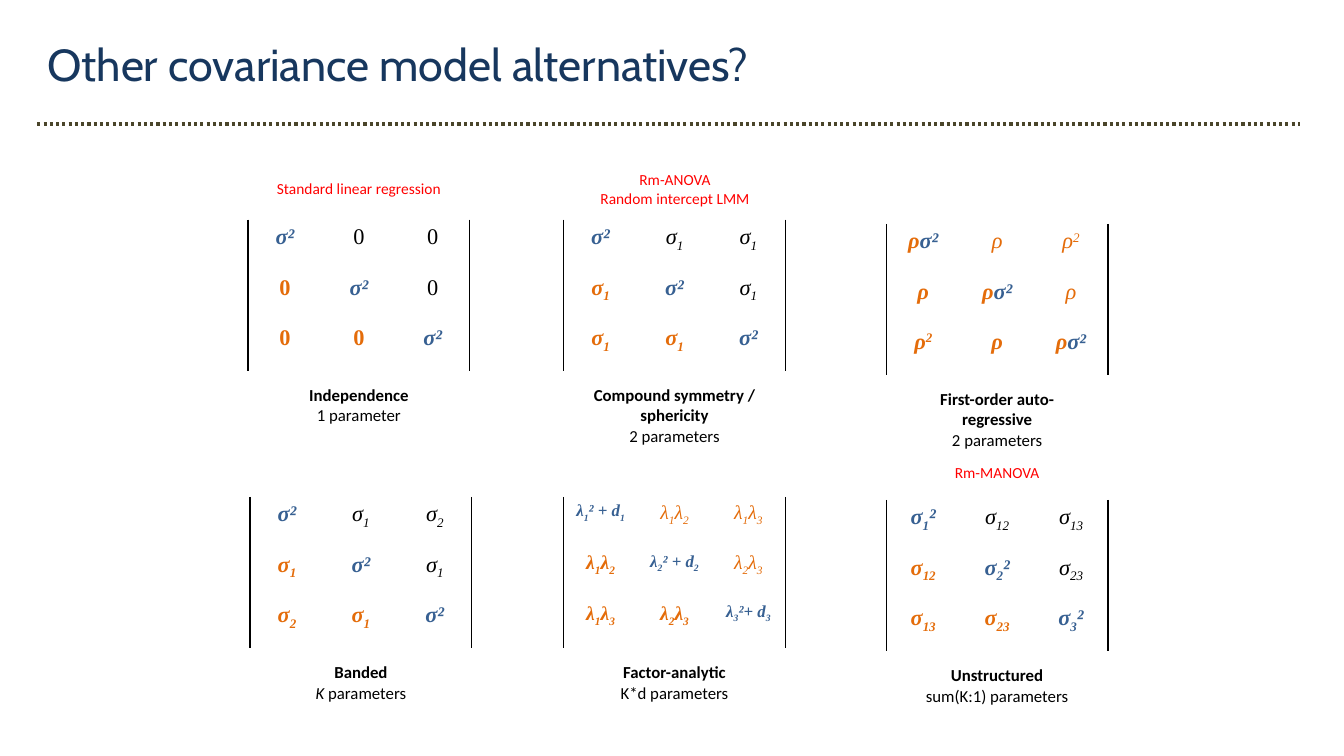
from pptx import Presentation
from pptx.dml.color import RGBColor
from pptx.enum.dml import MSO_LINE
from pptx.enum.shapes import MSO_CONNECTOR
from pptx.enum.text import PP_ALIGN as Align, MSO_AUTO_SIZE as Fit
from pptx.oxml import parse_xml
from pptx.oxml.ns import nsdecls
from pptx.util import Inches, Pt

BLUE, ORANGE, BLACK, RED = "376092", "E46C0A", "000000", "FF0000"
SIDE = 2.2
SHIFT = {"_": "-25000", "^": "30000"}
NO_GRID = "{2D5ABB26-0587-4C30-8999-92F81FD0307C}"

MODELS = [
    (2.46, 2.18, ["σ² 0 0", "0 σ² 0", "0 0 σ²"], BLACK, 16, 16,
     "Independence", ["1 parameter"], 1.2, False),
    (5.59, 2.18, ["σ² σ|_1 σ|_1", "σ|_1 σ² σ|_1", "σ|_1 σ|_1 σ²"], BLACK, 16, 16,
     "Compound symmetry / sphericity", ["2 parameters"], 2.41, True),
    (8.79, 2.22, ["ρ|σ² ρ ρ|^2", "ρ ρ|σ² ρ", "ρ|^2 ρ ρ|σ²"], ORANGE, 16, 16,
     "First-order auto-regressive", ["2 parameters"], 1.95, True),
    (2.48, 4.93, ["σ² σ|_1 σ|_2", "σ|_1 σ² σ|_1", "σ|_2 σ|_1 σ²"], BLACK, 16, 16,
     "Banded", ["K", " parameters"], 1.11, False),
    (5.59, 4.93, ["λ|_1|²~+~d|_1 λ|_1|λ|_2 λ|_1|λ|_3",
                  "λ|_1|λ|_2 λ|_2|²~+~d|_2 λ|_2|λ|_3",
                  "λ|_1|λ|_3 λ|_2|λ|_3 λ|_3|²+~d|_3"], ORANGE, 12, 14,
     "Factor-analytic", ["K*d parameters"], 1.3, False),
    (8.79, 4.96, ["σ|_1|² σ|_12 σ|_13", "σ|_12 σ|_2|² σ|_23", "σ|_13 σ|_23 σ|_3|²"],
     BLACK, 16, 16, "Unstructured", ["sum(K:1) parameters"], 1.63, False),
]

NOTES = [
    (2.64, 1.73, 1.84, 0.29, ["Standard linear regression"]),
    (5.85, 1.64, 1.69, 0.47, ["Rm-ANOVA", "Random intercept LMM"]),
    (9.36, 4.55, 1.06, 0.29, ["Rm-MANOVA"]),
]


def rgb(code):
    return RGBColor.from_string(code)


def add_run(para, text, size, face, color, bold=False, slant=False):
    run = para.add_run()
    run.text = text
    font = run.font
    font.size, font.name = Pt(size), face
    font.bold, font.italic = bold, slant
    font.color.rgb = rgb(color)
    return run


def add_box(slide, left, top, width, height, wrap=False):
    box = slide.shapes.add_textbox(Inches(left), Inches(top), Inches(width), Inches(height))
    frame = box.text_frame
    frame.word_wrap = wrap
    frame.auto_size = Fit.SHAPE_TO_FIT_TEXT
    return frame


def add_title(slide, text):
    frame = add_box(slide, 0.37, 0.32, 11.65, 0.64, True)
    add_run(frame.paragraphs[0], text, 32, "Cabin", "17375E")


def add_rule(slide):
    rule = slide.shapes.add_connector(
        MSO_CONNECTOR.STRAIGHT, Inches(0.37), Inches(1.23), Inches(12.89), Inches(1.23))
    rule.line.color.rgb = rgb("4A452A")
    rule.line.width = Pt(2.25)
    rule.line.dash_style = MSO_LINE.ROUND_DOT
    rule._element.spPr.append(parse_xml(f"<a:effectLst {nsdecls('a')}/>"))


def add_edge(cell, side):
    edge = parse_xml(
        f'<a:ln{side} {nsdecls("a")} w="12700"><a:solidFill>'
        f'<a:srgbClr val="{BLACK}"/></a:solidFill></a:ln{side}>')
    cell._tc.get_or_add_tcPr().insert(0, edge)


def fill_cell(cell, text, size, color, bold):
    cell.fill.background()
    para = cell.text_frame.paragraphs[0]
    para.alignment = Align.CENTER
    for part in text.replace("~", " ").split("|"):
        shift = SHIFT.get(part[0])
        tint = ORANGE if part == "ρ" else color
        run = add_run(para, part[1:] if shift else part, size,
                      "Times New Roman", tint, bold, part != "0")
        if shift:
            run._r.get_or_add_rPr().set("baseline", shift)


def add_matrix(slide, left, top, rows, upper, main_size, size):
    table = slide.shapes.add_table(
        3, 3, Inches(left), Inches(top), Inches(SIDE), Inches(1.5)).table
    table.first_row = table.horz_banding = False
    table._tbl.tblPr[0].text = NO_GRID
    for r, row in enumerate(rows):
        for c, text in enumerate(row.split()):
            color = BLUE if r == c else ORANGE if r > c else upper
            cell = table.cell(r, c)
            fill_cell(cell, text, main_size if r == c else size, color, r >= c)
            if c != 1:
                add_edge(cell, "L" if c == 0 else "R")


def add_label(slide, left, top, name, count, width, wrap):
    frame = add_box(slide, left + (SIDE - width) / 2, top + 1.59, width, 0.5, wrap)
    para = frame.paragraphs[0]
    para.alignment = Align.CENTER
    add_run(para, name, 12, "Calibri", BLACK, True)
    para.add_line_break()
    for part in count:
        add_run(para, part, 12, "Calibri", BLACK, slant=part == "K")


def add_note(slide, left, top, width, height, lines):
    frame = add_box(slide, left, top, width, height)
    for i, line in enumerate(lines):
        para = frame.add_paragraph() if i else frame.paragraphs[0]
        para.alignment = Align.CENTER
        add_run(para, line, 11, "Calibri", RED)


def main():
    deck = Presentation()
    deck.slide_width, deck.slide_height = Inches(13.33), Inches(7.5)
    slide = deck.slides.add_slide(deck.slide_layouts[6])
    add_title(slide, "Other covariance model alternatives?")
    add_rule(slide)
    for left, top, rows, upper, main_size, size, *label in MODELS:
        add_matrix(slide, left, top, rows, upper, main_size, size)
        add_label(slide, left, top, *label)
    for note in NOTES:
        add_note(slide, *note)
    deck.save("out.pptx")


if __name__ == "__main__":
    main()
